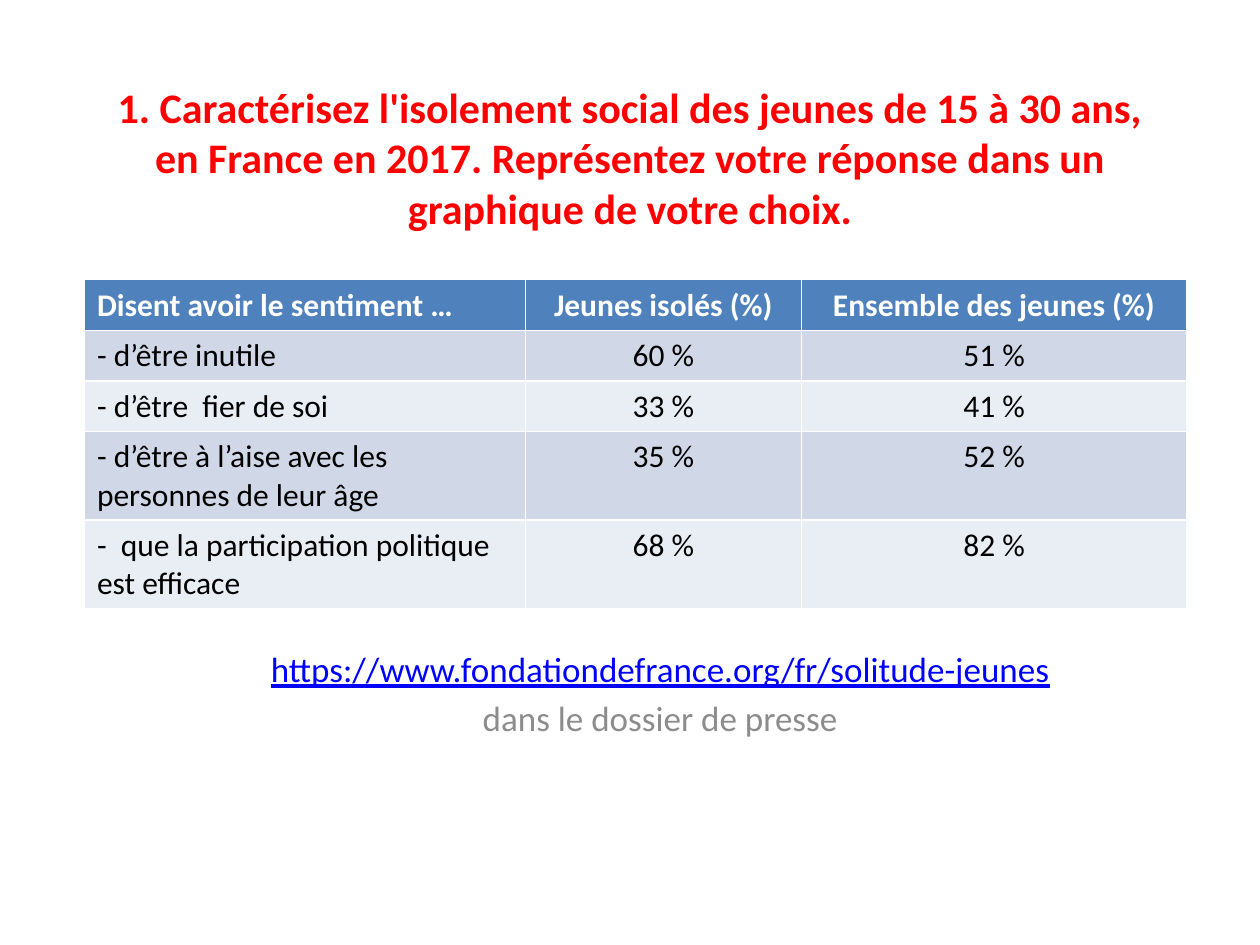
from pptx import Presentation
from pptx.dml.color import RGBColor
from pptx.enum.text import MSO_ANCHOR, PP_ALIGN
from pptx.util import Inches, Pt

COLORS = {
    "title": "FF0000", "link": "0000FF", "note": "8C8C8C",
    "head": "4F81BD", "odd": "D0D8E8", "even": "E9EDF4",
    "white": "FFFFFF", "black": "000000",
}
TITLE = ("1. Caractérisez l'isolement social des jeunes de 15 à 30 ans, en France "
         "en 2017. Représentez votre réponse dans un graphique de votre choix.")
ROWS = [
    ("Disent avoir le sentiment …", "Jeunes isolés (%)", "Ensemble des jeunes (%)"),
    ("- d’être inutile", "60 %", "51 %"),
    ("- d’être  fier de soi", "33 %", "41 %"),
    ("- d’être à l’aise avec les personnes de leur âge", "35 %", "52 %"),
    ("-  que la participation politique est efficace", "68 %", "82 %"),
]
COL_SHARES = (0.4, 0.25, 0.35)
ROW_HEIGHTS = (0.4, 0.4, 0.4, 0.7, 0.7)


def rgb(name):
    return RGBColor.from_string(COLORS[name])


def write(p, text, size, color, bold=False, underline=False,
          align=PP_ALIGN.CENTER, before=None):
    p.alignment = align
    if before is not None:
        p.space_before = Pt(before)
    r = p.add_run()
    r.text = text
    r.font.name = "Calibri"
    r.font.size = Pt(size)
    r.font.bold = bold
    r.font.underline = underline
    r.font.color.rgb = rgb(color)


def place_title(s, left, top, width, height):
    sp = s.shapes.title
    sp.left, sp.top, sp.width, sp.height = map(Inches, (left, top, width, height))
    tf = sp.text_frame
    tf.word_wrap = True
    tf.vertical_anchor = MSO_ANCHOR.MIDDLE
    write(tf.paragraphs[0], TITLE, 24, "title", bold=True)


def add_survey_table(s, left, top, width, height):
    """Add the survey table; the default table style supplies its white borders."""
    table = s.shapes.add_table(len(ROWS), len(COL_SHARES),
                               *map(Inches, (left, top, width, height))).table
    for col, share in zip(table.columns, COL_SHARES):
        col.width = Inches(round(width * share, 2))
    for row, share in zip(table.rows, ROW_HEIGHTS):
        row.height = Inches(height * share / sum(ROW_HEIGHTS))
    for i, values in enumerate(ROWS):
        head = i == 0
        fill = "head" if head else "odd" if i % 2 else "even"
        for j, value in enumerate(values):
            cell = table.cell(i, j)
            cell.fill.solid()
            cell.fill.fore_color.rgb = rgb(fill)
            write(cell.text_frame.paragraphs[0], value, 18,
                  "white" if head else "black", bold=head,
                  align=PP_ALIGN.CENTER if j else PP_ALIGN.LEFT)


def add_reference(s, left, top, width, height):
    tf = s.shapes.add_textbox(*map(Inches, (left, top, width, height))).text_frame
    tf.word_wrap = True
    write(tf.paragraphs[0], "https://www.fondationdefrance.org/fr/solitude-jeunes",
          20, "link", underline=True)
    write(tf.add_paragraph(), "dans le dossier de presse", 20, "note", before=4)


def main():
    prs = Presentation()
    prs.slide_width, prs.slide_height = Inches(10), Inches(7.5)
    s = prs.slides.add_slide(prs.slide_layouts[5])
    place_title(s, 0.75, 0.44, 8.5, 1.61)
    add_reference(s, 0.75, 5.09, 8.98, 0.94)
    add_survey_table(s, 0.67, 2.22, 8.74, 2.61)
    prs.save("out.pptx")


if __name__ == "__main__":
    main()
